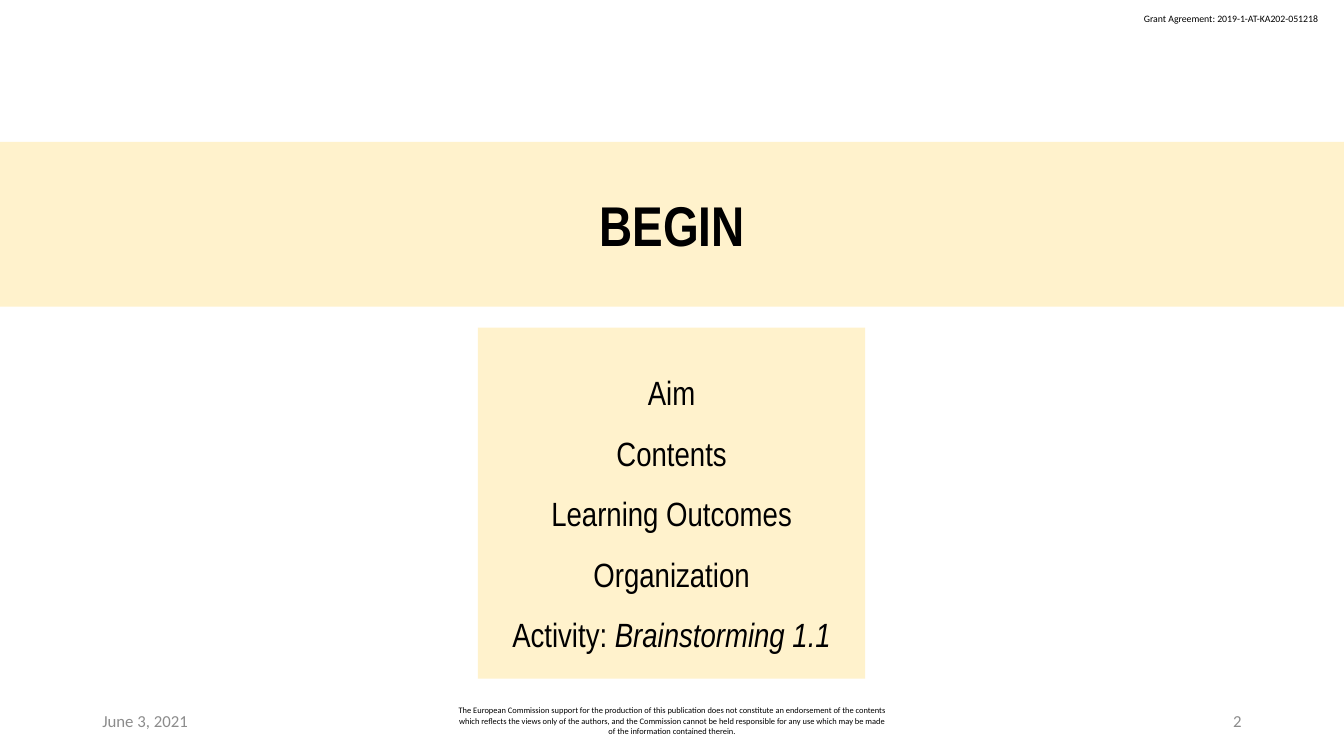
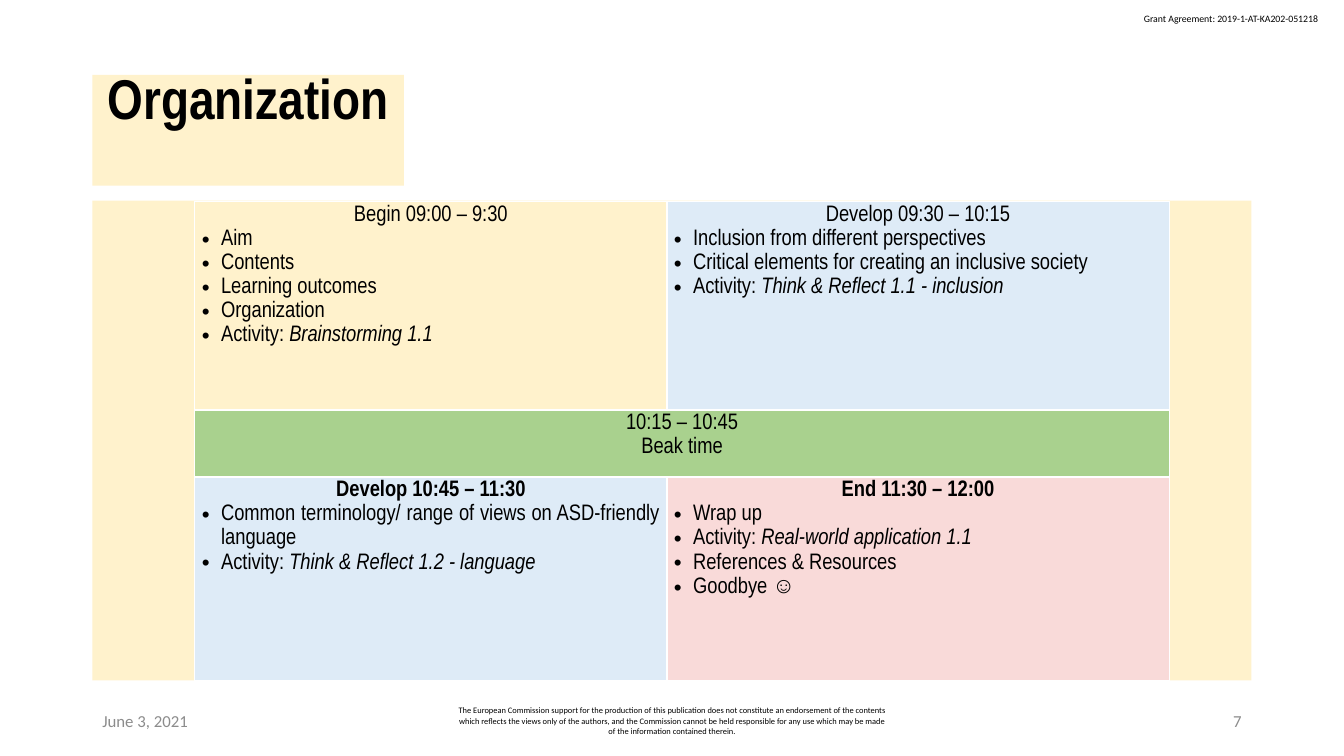
from lxml.etree import SubElement
from pptx import Presentation
from pptx.dml.color import RGBColor
from pptx.enum.shapes import MSO_SHAPE
from pptx.enum.text import MSO_ANCHOR, PP_ALIGN
from pptx.oxml import parse_xml
from pptx.oxml.ns import nsdecls, qn
from pptx.util import Inches, Pt

COLUMNS, ROWS = 160, 90
UNIT = Inches(1) / 12
CREAM, BLUE, GREEN, PINK = "FFF2CC", "DEEBF7", "A9D18E", "F9DAD9"
BLACK, GREY, WHITE = "000000", "8C8C8C", "FFFFFF"
NARROW, PLAIN = "Arial Narrow", "Calibri"
LEFT, CENTER, RIGHT = PP_ALIGN.LEFT, PP_ALIGN.CENTER, PP_ALIGN.RIGHT
color = RGBColor.from_string


def grid(*cells):
    return [round(cell * UNIT) for cell in cells]


def write(paragraph, text, size, font=NARROW, ink=BLACK, align=CENTER, spacing=1.0, bold=False):
    paragraph.alignment = align
    paragraph.line_spacing = spacing
    for index, part in enumerate(text.split("|")):
        run = paragraph.add_run()
        run.text = part
        run.font.size = Pt(size)
        run.font.name = font
        run.font.color.rgb = color(ink)
        run.font.bold = bold
        run.font.italic = index > 0


presentation = Presentation()
presentation.slide_width, presentation.slide_height = grid(COLUMNS, ROWS)

DISCLAIMER = (
    "The European Commission support for the production of this publication does not "
    "constitute an endorsement of the contents which reflects the views only of the authors, "
    "and the Commission cannot be held responsible for any use which may be made of the "
    "information contained therein."
)
pages = [
    ("BEGIN", "2", (0, 16.9, COLUMNS, 19.6), MSO_ANCHOR.MIDDLE, 1.0),
    ("Organization", "7", (11, 8.9, 37.1, 13.2), MSO_ANCHOR.TOP, 0.84),
]
slides = []
for heading, number, area, anchor, spacing in pages:
    slide = presentation.slides.add_slide(presentation.slide_layouts[5])
    slides.append(slide)
    title = slide.shapes.title
    title.left, title.top, title.width, title.height = grid(*area)
    title.fill.solid()
    title.fill.fore_color.rgb = color(CREAM)
    title.text_frame.vertical_anchor = anchor
    title.text_frame.margin_top = title.text_frame.margin_bottom = 0
    write(title.text_frame.paragraphs[0], heading, 40, spacing=spacing, bold=True)

    notices = [
        ("Grant Agreement: 2019-1-AT-KA202-051218", (135, 0.9, 23.6, 2.6), 7, BLACK, LEFT, False),
        ("June 3, 2021", (11, 83.4, 36, 4.8), 12, GREY, LEFT, True),
        (DISCLAIMER, (53, 83.4, 54, 4.8), 6, BLACK, CENTER, True),
        (number, (113, 83.4, 36, 4.8), 12, GREY, RIGHT, True),
    ]
    for text, area, size, ink, align, footer in notices:
        frame = slide.shapes.add_textbox(*grid(*area)).text_frame
        frame.word_wrap = footer
        frame.vertical_anchor = MSO_ANCHOR.MIDDLE if footer else MSO_ANCHOR.TOP
        write(frame.paragraphs[0], text, size, PLAIN, ink, align)

begin_slide, organization_slide = slides
panels = []
for slide, area in [
    (begin_slide, (56.9, 39, 46.1, 41.8)),
    (organization_slide, (11, 23.9, 138, 57.1)),
]:
    panel = slide.shapes.add_shape(MSO_SHAPE.RECTANGLE, *grid(*area))
    panel.shadow.inherit = False
    panel.fill.solid()
    panel.fill.fore_color.rgb = color(CREAM)
    panel.line.fill.background()
    panels.append(panel)

agenda = ["Aim", "Contents", "Learning Outcomes", "Organization", "Activity: |Brainstorming 1.1"]
frame = panels[0].text_frame
frame.word_wrap = True
frame.vertical_anchor = MSO_ANCHOR.MIDDLE
for index, item in enumerate(agenda):
    paragraph = frame.add_paragraph() if index else frame.paragraphs[0]
    write(paragraph, item, 24, spacing=1.5)

column_widths, row_heights = (56.2, 59.8), (24.8, 8, 24.2)
table_area = grid(23.2, 24, sum(column_widths), sum(row_heights))
table = organization_slide.shapes.add_table(3, 2, *table_area).table
table.first_row = table.horz_banding = False
for column, width in zip(table.columns, grid(*column_widths)):
    column.width = width
for row, height in zip(table.rows, grid(*row_heights)):
    row.height = height
table.cell(1, 0).merge(table.cell(1, 1))

sessions = [
    (0, 0, CREAM, ["Begin 09:00 – 9:30"],
     ["Aim", "Contents", "Learning outcomes", "Organization", "Activity: |Brainstorming 1.1"]),
    (0, 1, BLUE, ["Develop 09:30 – 10:15"],
     ["Inclusion from different perspectives",
      "Critical elements for creating an inclusive society",
      "Activity: |Think & Reflect 1.1 - inclusion"]),
    (1, 0, GREEN, ["10:15 – 10:45", "Beak time"], []),
    (2, 0, BLUE, ["Develop 10:45 – 11:30"],
     ["Common terminology/ range of views on ASD-friendly language",
      "Activity: |Think & Reflect 1.2 - language"]),
    (2, 1, PINK, ["End 11:30 – 12:00"],
     ["Wrap up", "Activity: |Real-world application 1.1", "References & Resources", "Goodbye ☺"]),
]
for row, column, fill, headings, items in sessions:
    cell = table.cell(row, column)
    cell.margin_left = cell.margin_right = Inches(0.07)
    cell.margin_top = cell.margin_bottom = 0
    cell.fill.solid()
    cell.fill.fore_color.rgb = color(fill)
    properties = cell._tc.get_or_add_tcPr()
    for position, side in enumerate(["lnL", "lnR", "lnT", "lnB"]):
        properties.insert(position, parse_xml(
            f'<a:{side} {nsdecls("a")} w="12700"><a:solidFill>'
            f'<a:srgbClr val="{WHITE}"/></a:solidFill></a:{side}>'))
    for index, text in enumerate(headings + items):
        paragraph = cell.text_frame.add_paragraph() if index else cell.text_frame.paragraphs[0]
        bulleted = index >= len(headings)
        write(paragraph, text, 16, align=PP_ALIGN.JUSTIFY if bulleted else CENTER,
              spacing=1.15, bold=row == 2 and not bulleted)
        if bulleted:
            settings = paragraph._p.get_or_add_pPr()
            settings.set("marL", str(Inches(0.19)))
            settings.set("indent", str(-Inches(0.19)))
            SubElement(settings, qn("a:buFont"), typeface="Arial")
            SubElement(settings, qn("a:buChar"), char="•")

presentation.save("out.pptx")
